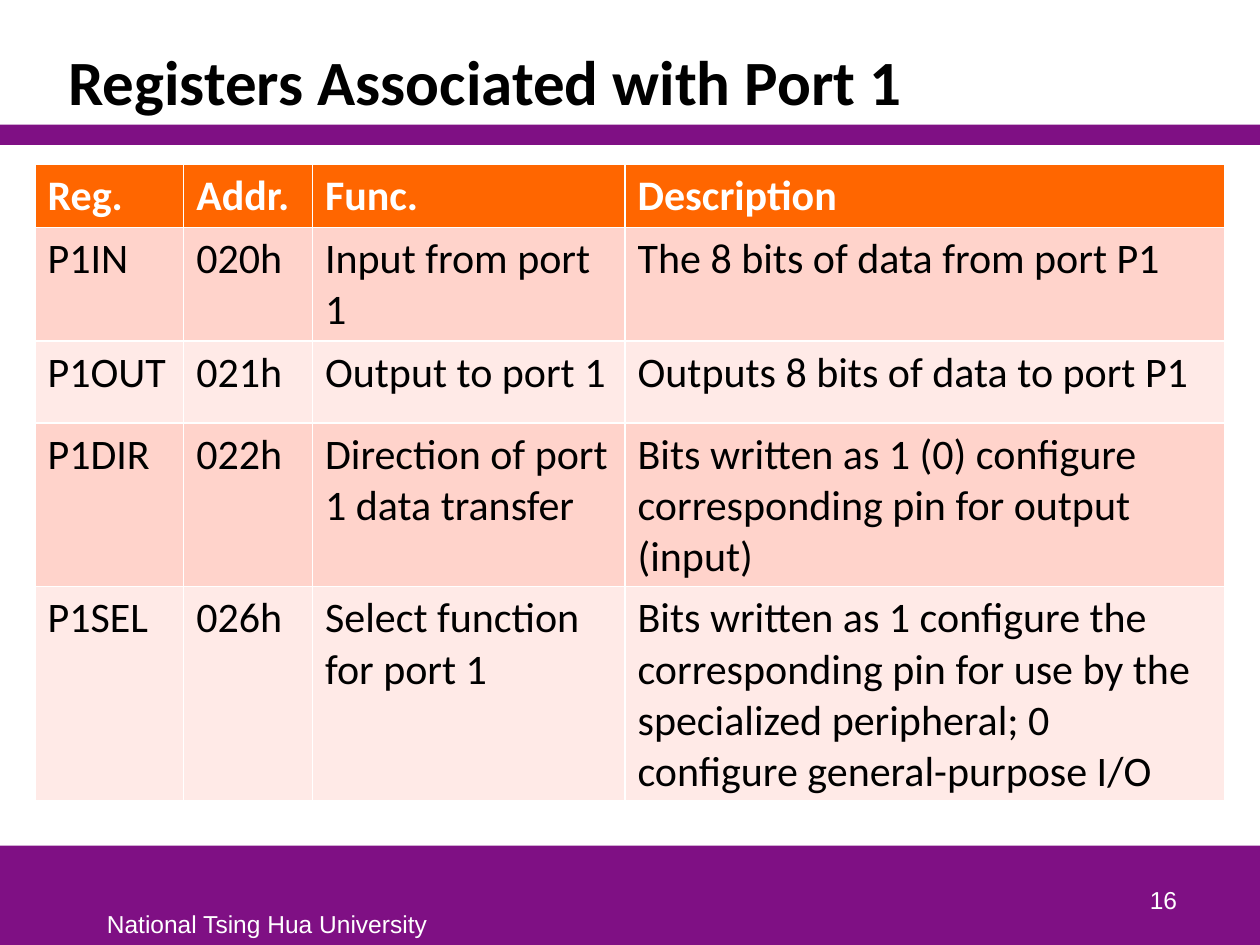
from pptx import Presentation
from pptx.dml.color import RGBColor
from pptx.enum.shapes import MSO_SHAPE
from pptx.enum.text import MSO_ANCHOR as Anchor, MSO_AUTO_SIZE as AutoSize, PP_ALIGN as Align
from pptx.util import Pt

COLORS = {
    "purple": "7F1084",
    "orange": "FF6600",
    "dark_band": "FFD3CB",
    "light_band": "FFEAE7",
    "white": "FFFFFF",
    "black": "000000",
}


def color(name):
    return RGBColor.from_string(COLORS[name])


def add_run(paragraph, text, font_name, size, color_name, bold=False):
    run = paragraph.add_run()
    run.text = text
    run.font.name = font_name
    run.font.size = Pt(size)
    run.font.bold = bold
    run.font.color.rgb = color(color_name)


presentation = Presentation()
presentation.slide_width = Pt(720)
presentation.slide_height = Pt(540)
slide = presentation.slides.add_slide(presentation.slide_layouts[5])

for top, height in [(483.2, 56.8), (71.3, 11.5)]:
    band = slide.shapes.add_shape(MSO_SHAPE.RECTANGLE, Pt(0), Pt(top), Pt(720), Pt(height))
    band.shadow.inherit = False
    band.fill.solid()
    band.fill.fore_color.rgb = color("purple")
    band.line.fill.background()

title = slide.shapes.title
title.left, title.top, title.width, title.height = Pt(31.7), Pt(18), Pt(645.8), Pt(53.3)
title.text_frame.auto_size = AutoSize.NONE
title.text_frame.vertical_anchor = Anchor.BOTTOM
paragraph = title.text_frame.paragraphs[0]
paragraph.alignment = Align.LEFT
paragraph.line_spacing = 0.85
add_run(paragraph, "Registers Associated with Port 1", "Calibri", 36, "black", True)

footers = [
    ("National Tsing Hua University", 54, 516.2, 198.7, 23.8, Align.LEFT, Anchor.TOP, False),
    ("16", 529.9, 490.3, 149.8, 36, Align.RIGHT, Anchor.BOTTOM, True),
]
for text, left, top, width, height, alignment, anchor, wrap in footers:
    text_box = slide.shapes.add_textbox(Pt(left), Pt(top), Pt(width), Pt(height))
    text_box.text_frame.word_wrap = wrap
    text_box.text_frame.vertical_anchor = anchor
    paragraph = text_box.text_frame.paragraphs[0]
    paragraph.alignment = alignment
    add_run(paragraph, text, "Arial", 14, "white")

registers = [
    ("Reg.", "Addr.", "Func.", "Description"),
    ("P1IN", "020h", "Input from port 1", "The 8 bits of data from port P1"),
    ("P1OUT", "021h", "Output to port 1", "Outputs 8 bits of data to port P1"),
    ("P1DIR", "022h", "Direction of port 1 data transfer",
     "Bits written as 1 (0) configure corresponding pin for output (input)"),
    ("P1SEL", "026h", "Select function for port 1",
     "Bits written as 1 configure the corresponding pin for use by the "
     "specialized peripheral; 0 configure general-purpose I/O"),
]
column_widths = [85, 73.6, 178.6, 342.8]
row_heights = [36, 64.8, 46.8, 93.6, 122.4]
table = slide.shapes.add_table(
    len(row_heights), len(column_widths),
    Pt(20), Pt(94), Pt(sum(column_widths)), Pt(sum(row_heights)),
).table
for column, width in zip(table.columns, column_widths):
    column.width = Pt(width)

for row_index, texts in enumerate(registers):
    table.rows[row_index].height = Pt(row_heights[row_index])
    is_header = row_index == 0
    fill_name = "orange" if is_header else "dark_band" if row_index % 2 else "light_band"
    for column_index, text in enumerate(texts):
        cell = table.cell(row_index, column_index)
        cell.fill.solid()
        cell.fill.fore_color.rgb = color(fill_name)
        add_run(cell.text_frame.paragraphs[0], text, "Calibri", 24,
                "white" if is_header else "black", is_header)

presentation.save("out.pptx")
